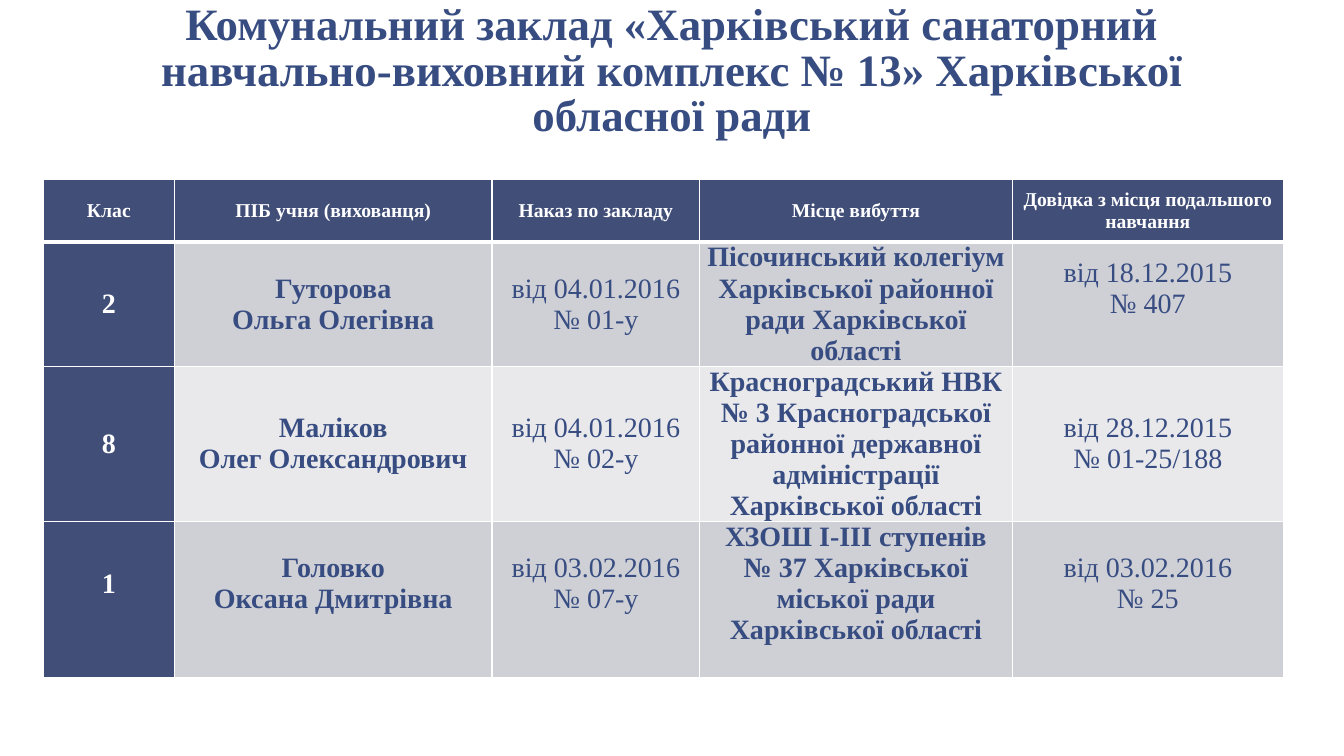
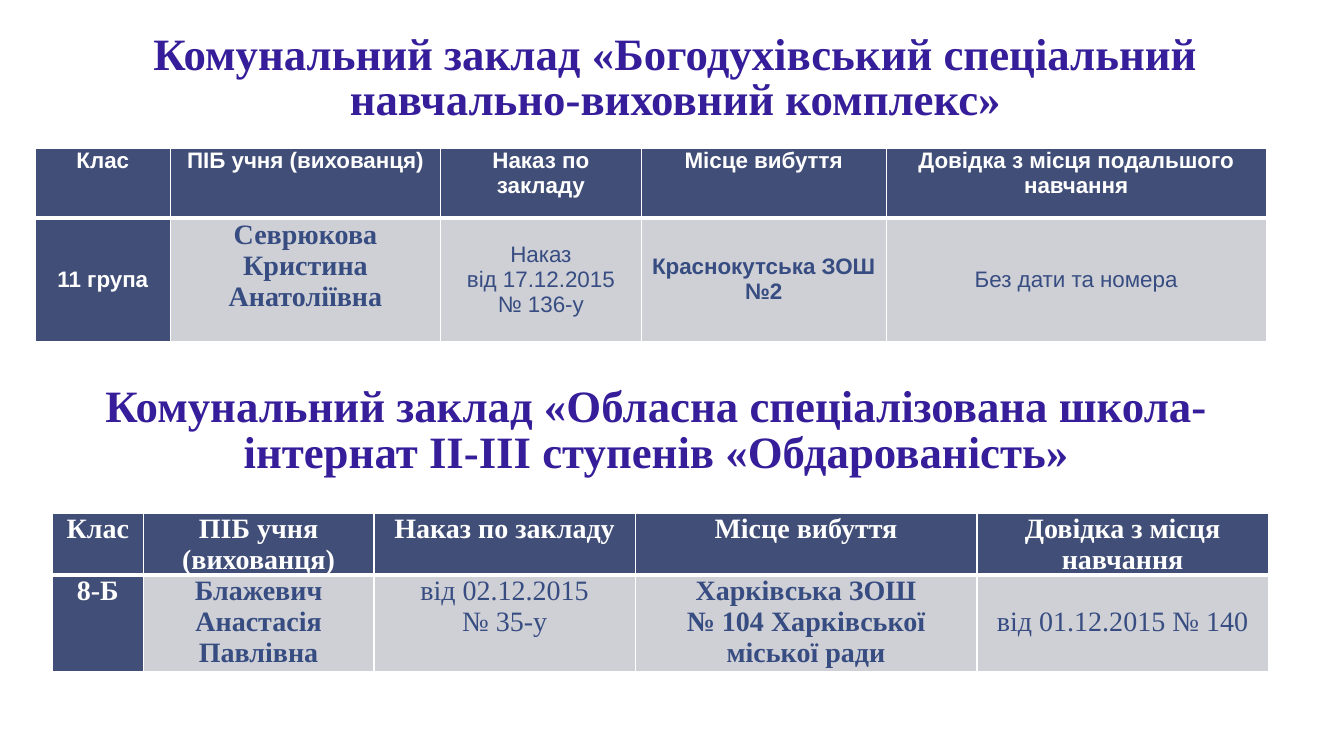
from dataclasses import dataclass, field

from lxml import etree
from pptx import Presentation
from pptx.dml.color import RGBColor
from pptx.enum.text import MSO_ANCHOR, MSO_AUTO_SIZE, PP_ALIGN
from pptx.oxml.ns import qn
from pptx.util import Inches, Pt

TOP, MIDDLE, BOTTOM = MSO_ANCHOR.TOP, MSO_ANCHOR.MIDDLE, MSO_ANCHOR.BOTTOM
CENTER = PP_ALIGN.CENTER
NO_AUTOFIT = MSO_AUTO_SIZE.NONE

COLORS = {
    "white": "FFFFFF",
    "navy": "414E77",
    "ink": "374C81",
    "violet": "361E9A",
    "band_dark": "CFD0D6",
    "band_light": "E9E9EC",
}
SERIF, SANS = "Times New Roman", "Arial"
TITLE_ONLY = 5
BOLD_COLUMNS = (0, 1, 3)
BLANK_LINE = 0.31
THIN, THICK = 1, 3


@dataclass(frozen=True)
class Style:
    font: str
    size: int
    color: str
    bold: bool = True


@dataclass(frozen=True)
class Entry:
    """Text of one cell, one paragraph per line; gaps are insets in inches."""
    text: str
    top_gap: float = 0
    bottom_gap: float = 0
    font: str = ""
    size: int = 0


@dataclass(frozen=True)
class Register:
    left: float
    top: float
    columns: list[float]
    rows: list[float]
    header: list[str]
    pupils: list[list[Entry]]
    font: str = SERIF
    header_size: int = 20
    body_size: int = 20
    header_anchor: MSO_ANCHOR = TOP
    body_anchor: MSO_ANCHOR = MIDDLE
    inset: float = 0.06


@dataclass(frozen=True)
class Heading:
    text: str
    box: tuple[float, float, float, float]
    color: str


@dataclass(frozen=True)
class Page:
    title: Heading
    registers: list[Register]
    subtitles: list[Heading] = field(default_factory=list)


def rgb(name: str) -> RGBColor:
    return RGBColor.from_string(COLORS[name])


def write(frame, text: str, style: Style, spacing: float = 1.0) -> None:
    for index, line in enumerate(text.split("\n")):
        paragraph = frame.paragraphs[0] if index == 0 else frame.add_paragraph()
        paragraph.alignment = CENTER
        paragraph.line_spacing = spacing
        paragraph.space_before = paragraph.space_after = Pt(0)
        run = paragraph.add_run()
        run.text = line
        run.font.name = style.font
        run.font.size = Pt(style.size)
        run.font.bold = style.bold
        run.font.color.rgb = rgb(style.color)


def format_heading(shape, heading: Heading) -> None:
    shape.left, shape.top, shape.width, shape.height = map(Inches, heading.box)
    frame = shape.text_frame
    frame.word_wrap = True
    frame.auto_size = NO_AUTOFIT
    frame.vertical_anchor = BOTTOM
    frame.margin_left = frame.margin_right = Inches(0.13)
    frame.margin_top = frame.margin_bottom = Inches(0.07)
    write(frame, heading.text, Style(SERIF, 32, heading.color), 0.85)


def add_borders(cell, top: int, bottom: int) -> None:
    properties = cell._tc.get_or_add_tcPr()
    for side, width in zip("LRTB", (THIN, THIN, top, bottom)):
        line = etree.SubElement(properties, qn(f"a:ln{side}"), w=str(Pt(width)))
        fill = etree.SubElement(line, qn("a:solidFill"))
        etree.SubElement(fill, qn("a:srgbClr"), val=COLORS["white"])


def fill_cell(cell, entry: Entry, row: int, column: int, register: Register) -> None:
    is_header = row == 0
    on_navy = is_header or column == 0
    band = "band_dark" if row % 2 else "band_light"
    add_borders(cell, THICK if row == 1 else THIN, THICK if is_header else THIN)
    cell.fill.solid()
    cell.fill.fore_color.rgb = rgb("navy" if on_navy else band)
    cell.vertical_anchor = register.header_anchor if is_header else register.body_anchor
    cell.margin_left = cell.margin_right = Inches(register.inset)
    cell.margin_top = Inches(entry.top_gap)
    cell.margin_bottom = Inches(entry.bottom_gap)
    style = Style(
        entry.font or register.font,
        entry.size or (register.header_size if is_header else register.body_size),
        "white" if on_navy else "ink",
        is_header or column in BOLD_COLUMNS,
    )
    write(cell.text_frame, entry.text, style)


def add_register(slide, register: Register) -> None:
    entries = [[Entry(label) for label in register.header], *register.pupils]
    table = slide.shapes.add_table(
        len(register.rows), len(register.columns),
        Inches(register.left), Inches(register.top),
        Inches(sum(register.columns)), Inches(sum(register.rows)),
    ).table
    for column, width in zip(table.columns, register.columns):
        column.width = Inches(width)
    for row, height in zip(table.rows, register.rows):
        row.height = Inches(height)
    for r, row_entries in enumerate(entries):
        for c, entry in enumerate(row_entries):
            fill_cell(table.cell(r, c), entry, r, c, register)


def add_page(deck, page: Page) -> None:
    slide = deck.slides.add_slide(deck.slide_layouts[TITLE_ONLY])
    format_heading(slide.shapes.title, page.title)
    for subtitle in page.subtitles:
        box = slide.shapes.add_textbox(*map(Inches, subtitle.box))
        format_heading(box, subtitle)
    for register in page.registers:
        add_register(slide, register)


HEADER = [
    "Клас", "ПІБ учня (вихованця)", "Наказ по закладу", "Місце вибуття",
    "Довідка з місця подальшого навчання",
]

KHARKIV = Register(
    0.43, 1.78, [1.3, 3.15, 2.06, 3.1, 2.69], [0.62, 1.23, 1.54, 1.54],
    HEADER,
    [
        [
            Entry("2"),
            Entry("Гуторова\nОльга Олегівна"),
            Entry("від 04.01.2016\n№ 01-у"),
            Entry("Пісочинський колегіум Харківської районної ради Харківської області"),
            Entry("від 18.12.2015\n№ 407", bottom_gap=BLANK_LINE),
        ],
        [
            Entry("8"),
            Entry("Маліков\nОлег Олександрович"),
            Entry("від 04.01.2016 № 02-у"),
            Entry("Красноградський НВК № 3 Красноградської районної державної "
                  "адміністрації Харківської області"),
            Entry("від 28.12.2015\n№ 01-25/188"),
        ],
        [
            Entry(text, bottom_gap=BLANK_LINE) for text in (
                "1",
                "Головко\nОксана Дмитрівна",
                "від 03.02.2016\n№ 07-у",
                "ХЗОШ І-ІІІ ступенів\n№ 37 Харківської міської ради Харківської області",
                "від 03.02.2016\n№ 25",
            )
        ],
    ],
    header_size=14, header_anchor=MIDDLE,
)

BOHODUKHIV = Register(
    0.35, 1.47, [1.34, 2.68, 1.99, 2.43, 3.77], [0.69, 1.23],
    HEADER,
    [[
        Entry("11 група"),
        Entry("Севрюкова Кристина Анатоліївна", bottom_gap=BLANK_LINE - 0.03,
              font=SERIF, size=20),
        Entry("Наказ\nвід 17.12.2015\n№ 136-у"),
        Entry("Краснокутська ЗОШ №2"),
        Entry("Без дати та номера"),
    ]],
    font=SANS, header_size=16, body_size=16,
)

OBDAROVANIST = Register(
    0.52, 5.09, [0.9, 2.29, 2.59, 3.39, 2.89], [0.61, 0.96],
    [*HEADER[:4], "Довідка з місця навчання"],
    [[
        Entry("8-Б"),
        Entry("Блажевич Анастасія\nПавлівна"),
        Entry("від 02.12.2015\n№ 35-у"),
        Entry("Харківська ЗОШ\n№ 104 Харківської міської ради"),
        Entry("від 01.12.2015 № 140", top_gap=BLANK_LINE),
    ]],
    body_anchor=TOP, inset=0.07,
)

PAGES = [
    Page(
        Heading("Комунальний заклад «Харківський санаторний навчально-виховний "
                "комплекс № 13» Харківської обласної ради",
                (0.68, 0, 11.97, 1.47), "ink"),
        [KHARKIV],
    ),
    Page(
        Heading("Комунальний заклад «Богодухівський спеціальний "
                "навчально-виховний комплекс»",
                (0.99, 0.21, 11.42, 1.1), "violet"),
        [BOHODUKHIV, OBDAROVANIST],
        [Heading("Комунальний заклад «Обласна спеціалізована школа-інтернат "
                 "ІІ-ІІІ ступенів «Обдарованість»",
                 (0.37, 3.71, 12.28, 1.1), "violet")],
    ),
]


def main() -> None:
    deck = Presentation()
    deck.slide_width, deck.slide_height = Inches(13.33), Inches(7.5)
    for page in PAGES:
        add_page(deck, page)
    deck.save("out.pptx")


if __name__ == "__main__":
    main()
